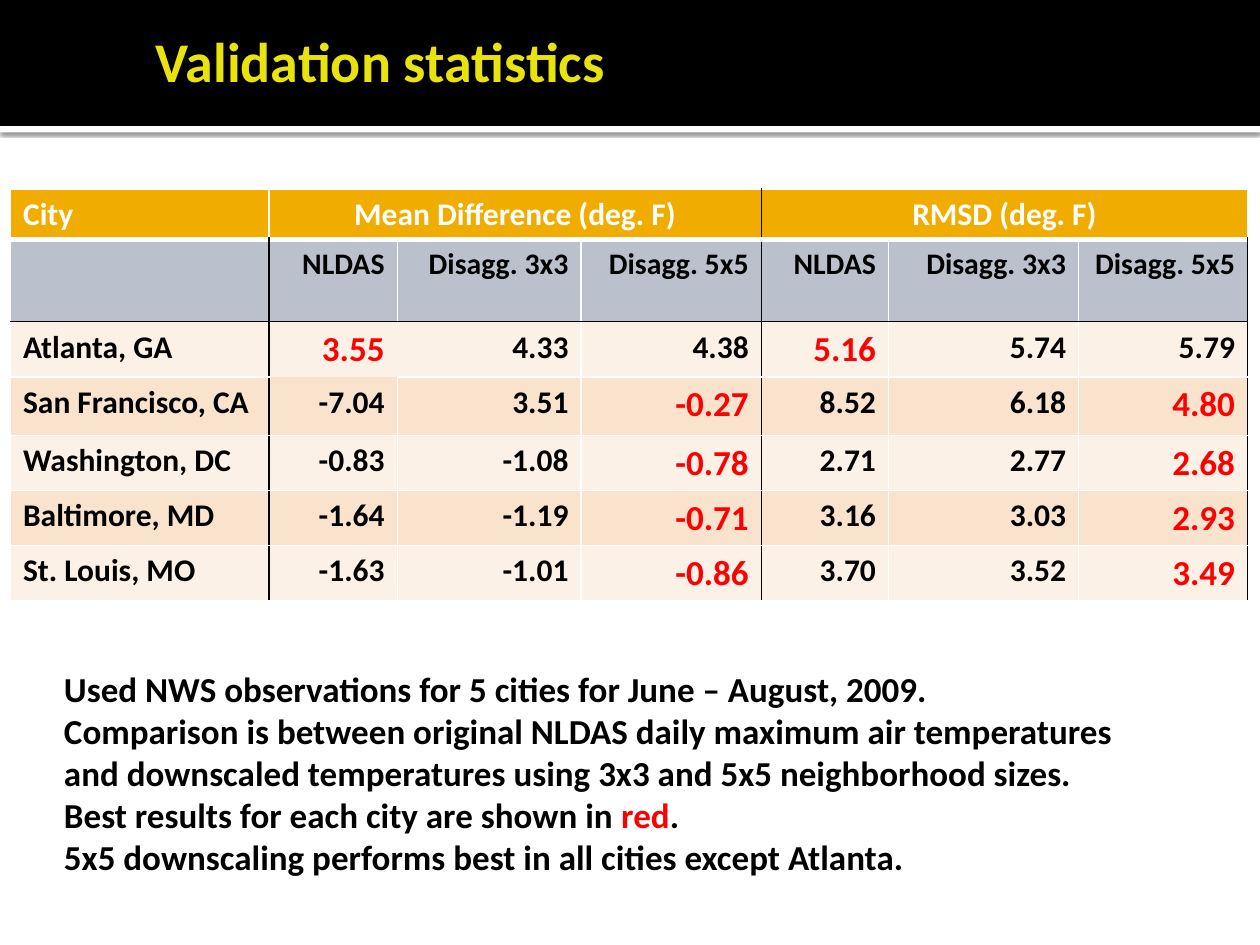
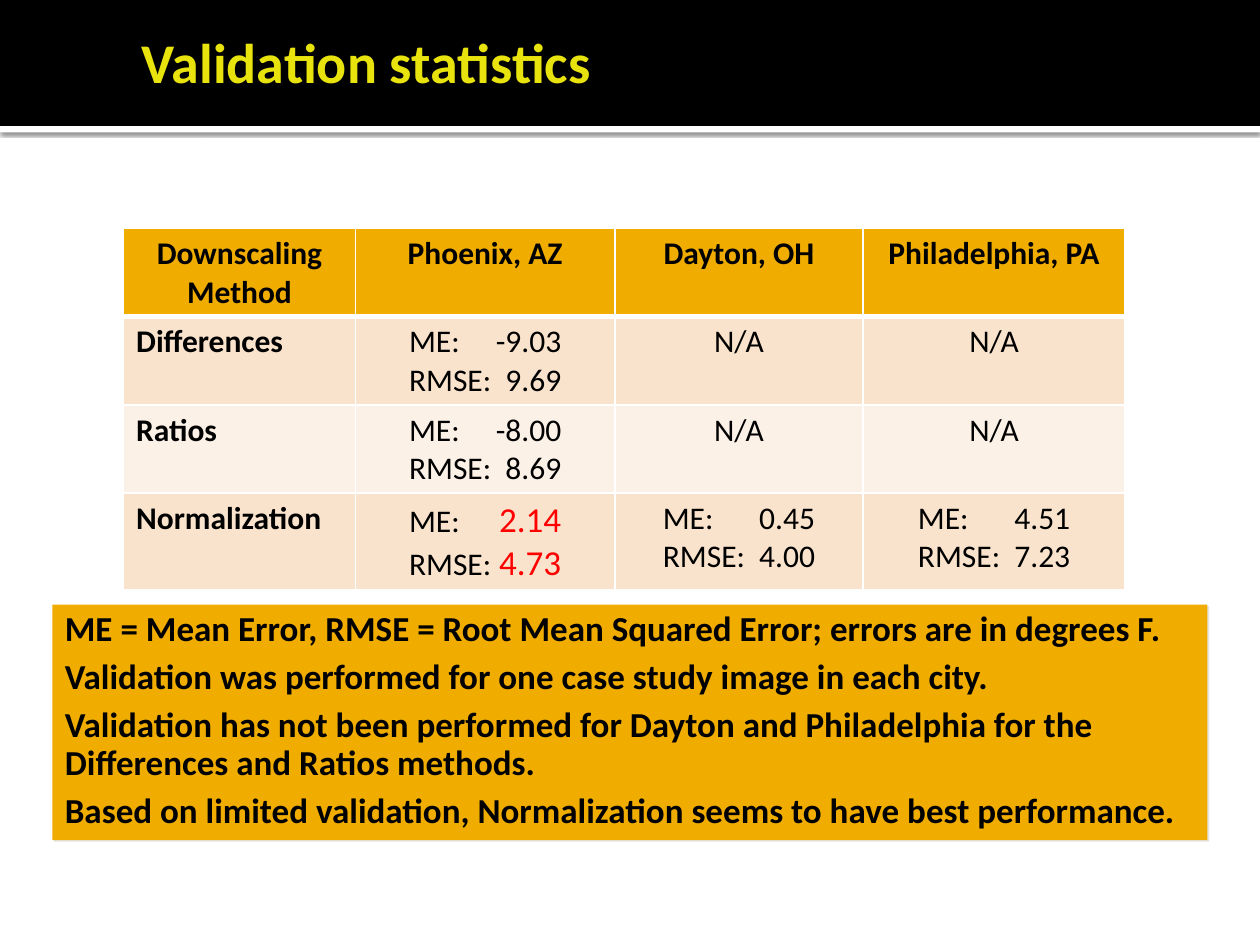
import pptx
import pptx.util
import pptx.dml.color
import pptx.enum.shapes
import pptx.enum.text
import pptx.oxml
import pptx.oxml.ns
from lxml import etree

Pt = pptx.util.Pt
qn = pptx.oxml.ns.qn
ALIGN = pptx.enum.text.PP_ALIGN
RECT = pptx.enum.shapes.MSO_SHAPE.RECTANGLE

FONT = "Calibri"
COLORS = {
    "black": "000000", "white": "FFFFFF", "title": "E8E30D", "gold": "F0AD00",
    "gray": "BAC0CC", "cream": "FCF1E7", "peach": "F9E3CC", "red": "FF0000",
    "box_shadow": "E4E4E4",
}
WIDTH, HEIGHT = 720, 540
BAND_HEIGHT = 72
PAIR_WIDTH = 87  # a label and its right-aligned value


def rgb(name):
    return pptx.dml.color.RGBColor.from_string(COLORS[name])


# Text: parts between asterisks are red
def write(tf, paras, size, color="black", bold=True, align=ALIGN.LEFT,
          red_size=None, tab=None, line_spacing=None, gap=0):
    tf.word_wrap = True
    for i, text in enumerate(paras):
        p = tf.paragraphs[0] if i == 0 else tf.add_paragraph()
        p.alignment = align
        if line_spacing:
            p.line_spacing = line_spacing
        if i and gap:
            p.space_before = Pt(gap)
        if tab:
            tabs = etree.SubElement(p._p.get_or_add_pPr(), qn("a:tabLst"))
            etree.SubElement(tabs, qn("a:tab"), pos=str(Pt(tab)), algn="r")
        p.font.name, p.font.size, p.font.bold = FONT, Pt(size), bold
        p.font.color.rgb = rgb(color)
        for j, part in enumerate(text.split("*")):
            if part:
                r = p.add_run()
                r.text = part
                if j % 2:
                    r.font.size = Pt(red_size or size)
                    r.font.color.rgb = rgb("red")


def add_text(s, box, paras, size, color="black"):
    sp = s.shapes.add_textbox(*map(Pt, box))
    write(sp.text_frame, paras, size, color)


# Shapes
def add_rect(s, box, fill):
    sp = s.shapes.add_shape(RECT, *map(Pt, box))
    sp.shadow.inherit = False
    sp.fill.solid()
    sp.fill.fore_color.rgb = rgb(fill)
    sp.line.fill.background()
    return sp


def add_shadow(sp, color, alpha, blur, dist, angle):
    effects = sp._element.spPr.find(qn("a:effectLst"))
    shadow = etree.SubElement(
        effects, qn("a:outerShdw"), blurRad=str(Pt(blur)), dist=str(Pt(dist)),
        dir=str(angle * 60000), algn="tl", rotWithShape="0")
    clr = etree.SubElement(shadow, qn("a:srgbClr"), val=COLORS[color])
    etree.SubElement(clr, qn("a:alpha"), val=str(alpha * 1000))


def title_band(s, box, title, title_left, title_top):
    x, y, w, h = box
    strip = add_rect(s, (x, y + h, w, 3.6), "white")
    add_shadow(strip, "black", 60, 2.5, 0.8, 90)
    add_rect(s, box, "black")
    add_text(s, (x + title_left, y + title_top, 570, 46), [title], 32, "title")


# Tables
def set_border(cell, side, line):
    ln = etree.SubElement(cell._tc.get_or_add_tcPr(), qn("a:ln" + side))
    if line is None:
        etree.SubElement(ln, qn("a:noFill"))
        return
    color, width = line
    ln.set("w", str(Pt(width)))
    fill = etree.SubElement(ln, qn("a:solidFill"))
    etree.SubElement(fill, qn("a:srgbClr"), val=COLORS[color])


def add_table(s, left, top, widths, heights):
    sp = s.shapes.add_table(len(heights), len(widths), Pt(left), Pt(top),
                            Pt(sum(widths)), Pt(sum(heights)))
    table = sp.table
    for col, w in zip(table.columns, widths):
        col.width = Pt(w)
    for row, h in zip(table.rows, heights):
        row.height = Pt(h)
    return table


def style_cells(table, vertical, horizontal, fills):
    """vertical(row, edge) and horizontal(edge, col) give each line."""
    for r, fill in enumerate(fills):
        for c in range(len(table.columns)):
            cell = table.cell(r, c)
            right = c + (cell.span_width if cell.is_merge_origin else 1)
            set_border(cell, "L", vertical(r, c))
            set_border(cell, "R", vertical(r, right))
            set_border(cell, "T", horizontal(r, c))
            set_border(cell, "B", horizontal(r + 1, c))
            cell.fill.solid()
            cell.fill.fore_color.rgb = rgb(fill)


def city_table(s, left, top):
    widths = [147.6, 73.4, 105.1, 103, 72.7, 108.7, 96.5]
    heights = [27, 47, 31.5, 33.5, 31.5, 31.5, 31.5]
    methods = ["NLDAS", "Disagg. 3x3", "Disagg. 5x5"]
    rows = [
        ["City", "Mean Difference (deg. F)", "", "", "RMSD (deg. F)", "", ""],
        [""] + methods * 2,
        ["Atlanta, GA", "*3.55*", "4.33", "4.38", "*5.16*", "5.74", "5.79"],
        ["San Francisco, CA", "-7.04", "3.51", "*-0.27*", "8.52", "6.18", "*4.80*"],
        ["Washington, DC", "-0.83", "-1.08", "*-0.78*", "2.71", "2.77", "*2.68*"],
        ["Baltimore, MD", "-1.64", "-1.19", "*-0.71*", "3.16", "3.03", "*2.93*"],
        ["St. Louis, MO", "-1.63", "-1.01", "*-0.86*", "3.70", "3.52", "*3.49*"],
    ]

    def vertical(r, edge):
        if (r, edge) == (2, 2):
            return None
        black = edge == 4 or (r > 0 and edge in (1, 7))
        return ("black" if black else "white", 1)

    def horizontal(edge, c):
        if (edge, c) == (3, 1):
            return None
        return {1: ("white", 3), 2: ("black", 1)}.get(edge, ("white", 1))

    table = add_table(s, left, top, widths, heights)
    for c in (1, 4):
        table.cell(0, c).merge(table.cell(0, c + 2))
    style_cells(table, vertical, horizontal,
                ["gold", "gray", "cream", "peach", "cream", "peach", "cream"])
    for r, row in enumerate(rows):
        for c, text in enumerate(row):
            if not text:
                continue
            align = ALIGN.LEFT if c == 0 else ALIGN.CENTER if r == 0 else ALIGN.RIGHT
            write(table.cell(r, c).text_frame, [text], 17 if r == 1 else 18,
                  "white" if r == 0 else "black", align=align, red_size=20)


def method_table(s, left, top):
    widths = [132.5, 148.3, 141.8, 149.8]
    heights = [50.4, 50.4, 50.4, 55.4]
    rows = [
        ["Downscaling Method", "Phoenix, AZ", "Dayton, OH", "Philadelphia, PA"],
        ["Differences", ("-9.03", "9.69"), "N/A", "N/A"],
        ["Ratios", ("-8.00", "8.69"), "N/A", "N/A"],
        ["Normalization", ("*2.14*", "*4.73*"), ("0.45", "4.00"), ("4.51", "7.23")],
    ]
    table = add_table(s, left, top, widths, heights)
    style_cells(table, lambda r, edge: ("white", 1),
                lambda edge, c: ("white", 3 if edge == 1 else 1),
                ["gold", "peach", "cream", "peach"])
    for r, row in enumerate(rows):
        for c, value in enumerate(row):
            cell = table.cell(r, c)
            if isinstance(value, tuple):
                cell.margin_left = Pt((widths[c] - PAIR_WIDTH) / 2)
                paras = [f"{name}:\t{v}" for name, v in zip(("ME", "RMSE"), value)]
                write(cell.text_frame, paras, 18, bold=False, red_size=20,
                      tab=PAIR_WIDTH)
            else:
                align = ALIGN.LEFT if r and c == 0 else ALIGN.CENTER
                write(cell.text_frame, [value], 18, bold=r == 0 or c == 0,
                      align=align)


# Gold box with the notes on the methods
def note_box(s, box, paras):
    sp = add_rect(s, box, "gold")
    add_shadow(sp, "box_shadow", 100, 0, 1.4, 45)
    sp.text_frame.vertical_anchor = pptx.enum.text.MSO_ANCHOR.TOP
    write(sp.text_frame, paras, 20, line_spacing=0.9, gap=6)


# Slides
def city_slide(s, box):
    x, y, w, h = box
    title_band(s, (x, y, w, BAND_HEIGHT), "Validation statistics", 82, 11.5)
    city_table(s, x + 6, y + 108)
    add_text(s, (x + 29.5, y + 378, 636.5, 128), [
        "Used NWS observations for 5 cities for June – August, 2009.",
        "Comparison is between original NLDAS daily maximum air temperatures "
        "and downscaled temperatures using 3x3 and 5x5 neighborhood sizes.",
        "Best results for each city are shown in *red*.",
        "5x5 downscaling performs best in all cities except Atlanta.",
    ], 20)


def method_slide(s, box):
    x, y, w, h = box
    title_band(s, (x, y, w, BAND_HEIGHT), "Validation statistics", 74, 12.2)
    method_table(s, x + 70.6, y + 130.5)
    note_box(s, (x + 30, y + 345.5, 660, 134.6), [
        "ME = Mean Error, RMSE = Root Mean Squared Error; errors are in degrees F.",
        "Validation was performed for one case study image in each city.",
        "Validation has not been performed for Dayton and Philadelphia for the "
        "Differences and Ratios methods.",
        "Based on limited validation, Normalization seems to have best performance.",
    ])


def main():
    prs = pptx.Presentation()
    prs.slide_width, prs.slide_height = Pt(WIDTH), Pt(HEIGHT)
    for build in (city_slide, method_slide):
        s = prs.slides.add_slide(prs.slide_layouts[6])
        build(s, (0, 0, WIDTH, HEIGHT))
    prs.save("out.pptx")


if __name__ == "__main__":
    main()
